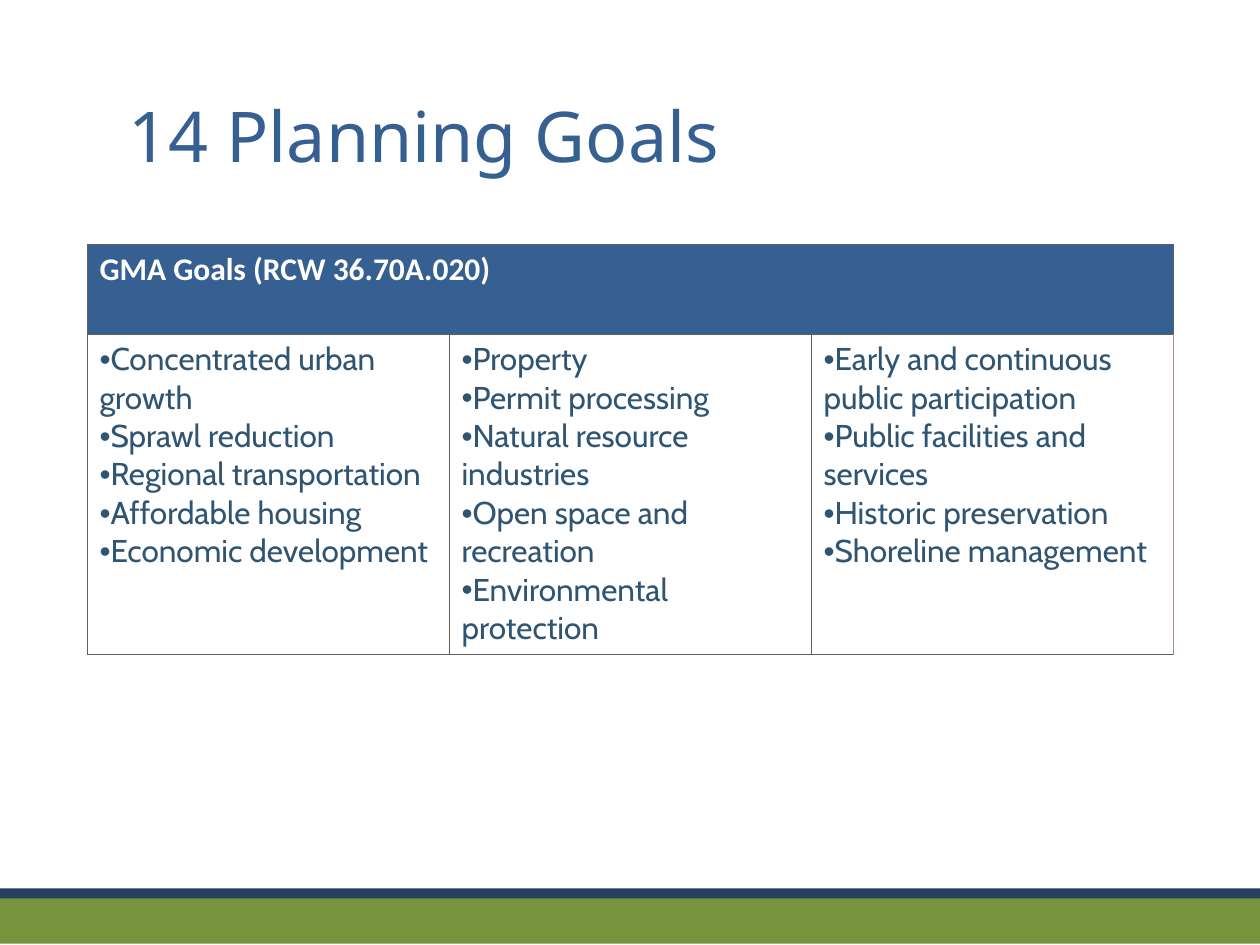
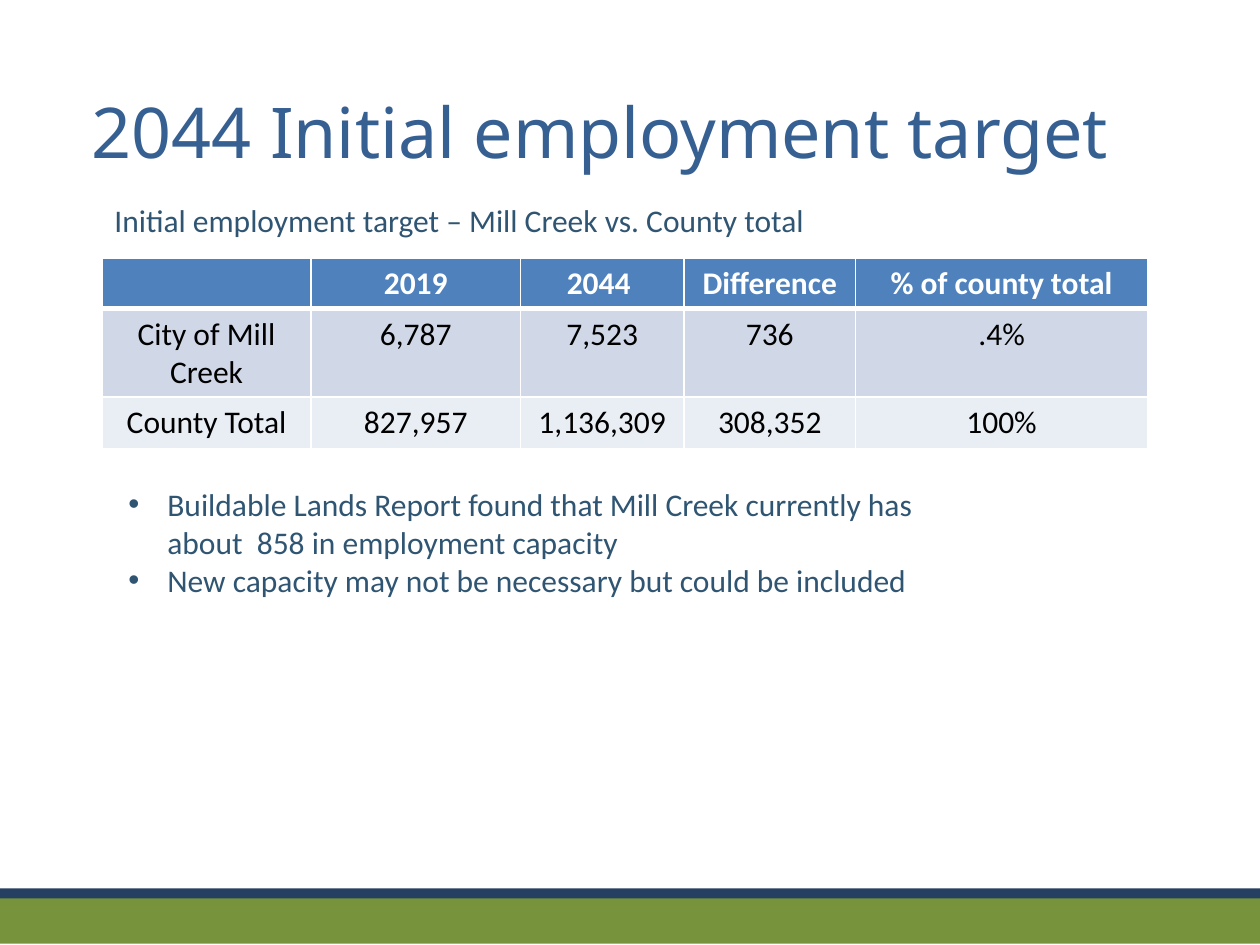
from lxml import etree
from pptx import Presentation
from pptx import util as u
from pptx.dml.color import RGBColor
from pptx.enum import shapes, text
from pptx.oxml import ns

NAVY = RGBColor(0x25, 0x40, 0x61)
GREEN = RGBColor(0x77, 0x93, 0x3C)
TITLE_BLUE = RGBColor(0x37, 0x60, 0x92)
BODY_BLUE = RGBColor(0x2F, 0x55, 0x72)
HEADER_BLUE = RGBColor(0x4F, 0x81, 0xBD)
ROW_TINTS = (RGBColor(0xD0, 0xD8, 0xE8), RGBColor(0xE9, 0xED, 0xF4))
GRID_GREY = RGBColor(0x5F, 0x5F, 0x5F)
EDGE_ROSE = RGBColor(0xB0, 0x8B, 0x8B)
WHITE = RGBColor(0xFF, 0xFF, 0xFF)
BLACK = RGBColor(0, 0, 0)

TITLE_FONT, GOALS_FONT, BODY_FONT = "Noto Sans", "Cabin", "Calibri"
BODY_SIZE = 18

GOALS = (
    ("Concentrated urban growth", "Sprawl reduction", "Regional transportation",
     "Affordable housing", "Economic development"),
    ("Property", "Permit processing", "Natural resource industries",
     "Open space and recreation", "Environmental protection"),
    ("Early and continuous public participation", "Public facilities and services",
     "Historic preservation", "Shoreline management"),
)
TARGETS = (
    ("", "2019", "2044 ", "Difference", "% of county total"),
    ("City of Mill Creek", "6,787", "7,523", "736", ".4%"),
    ("County Total", "827,957", "1,136,309", "308,352", "100%"),
)
CAPACITY_NOTES = (
    "Buildable Lands Report found that Mill Creek currently has about  858 "
    "in employment capacity",
    "New capacity may not be necessary but could be included",
)


def inches(box):
    return [u.Inches(length) for length in box]


def write_run(paragraph, words, color, font=BODY_FONT, size=BODY_SIZE, bold=False):
    run = paragraph.add_run()
    run.text = words
    run.font.name = font
    run.font.size = u.Pt(size)
    run.font.bold = bold
    run.font.color.rgb = color


def write_bullets(frame, items, color, font=BODY_FONT, indent=0):
    for i, item in enumerate(items):
        paragraph = frame.paragraphs[0] if i == 0 else frame.add_paragraph()
        props = paragraph._p.get_or_add_pPr()
        props.set("marL", str(u.Inches(indent)))
        props.set("indent", str(-u.Inches(indent)))
        etree.SubElement(props, ns.qn("a:buFont"), typeface="Arial")
        etree.SubElement(props, ns.qn("a:buChar"), char="•")
        write_run(paragraph, item, color, font)


def fill_cell(cell, color):
    cell.fill.solid()
    cell.fill.fore_color.rgb = color


def set_borders(cell, color, width, **special):
    """Draw all four borders; special maps a side (L, R, T, B) to (color, width)."""
    props = cell._tc.get_or_add_tcPr()
    for i, side in enumerate("LRTB"):
        side_color, side_width = special.get(side, (color, width))
        line = etree.Element(ns.qn(f"a:ln{side}"), w=str(u.Pt(side_width)))
        solid = etree.SubElement(line, ns.qn("a:solidFill"))
        etree.SubElement(solid, ns.qn("a:srgbClr"), val=str(side_color))
        props.insert(i, line)


def add_grid(slide, box, widths, heights):
    table = slide.shapes.add_table(len(heights), len(widths), *inches(box)).table
    for column, width in zip(table.columns, widths):
        column.width = u.Inches(width)
    for row, height in zip(table.rows, heights):
        row.height = u.Inches(height)
    return table


def add_bottom_bands(slide):
    for top, height, color in ((7.05, 0.09, NAVY), (7.13, 0.36, GREEN)):
        band = slide.shapes.add_shape(
            shapes.MSO_SHAPE.RECTANGLE, *inches((0, top, 10, height)))
        band.shadow.inherit = False
        band.fill.solid()
        band.fill.fore_color.rgb = color
        band.line.fill.background()


def add_titled_slide(deck, heading, box):
    slide = deck.slides.add_slide(deck.slide_layouts[5])
    title = slide.shapes.title
    title.left, title.top, title.width, title.height = inches(box)
    frame = title.text_frame
    frame.auto_size = text.MSO_AUTO_SIZE.NONE
    frame.vertical_anchor = text.MSO_ANCHOR.MIDDLE
    frame.paragraphs[0].alignment = text.PP_ALIGN.LEFT
    write_run(frame.paragraphs[0], heading, TITLE_BLUE, TITLE_FONT, 40)
    add_bottom_bands(slide)
    return slide


def add_goals_table(slide, box):
    count = len(GOALS)
    table = add_grid(slide, box, [box[2] / count] * count, (0.71, box[3] - 0.71))
    for col, goals in enumerate(GOALS):
        header, body = table.cell(0, col), table.cell(1, col)
        fill_cell(header, TITLE_BLUE)
        set_borders(header, GRID_GREY, 0.5)
        fill_cell(body, WHITE)
        edge = {"R": (EDGE_ROSE, 0.5)} if col == count - 1 else {}
        set_borders(body, GRID_GREY, 0.5, **edge)
        write_bullets(body.text_frame, goals, BODY_BLUE, GOALS_FONT)
    table.cell(0, 0).merge(table.cell(0, count - 1))
    write_run(table.cell(0, 0).text_frame.paragraphs[0],
              "GMA Goals (RCW 36.70A.020)", WHITE, bold=True)


def add_targets_table(slide, box):
    table = add_grid(slide, box, (1.66, 1.66, 1.3, 1.36, 2.32), (0.4, 0.69, 0.41))
    for r, row in enumerate(TARGETS):
        is_header = r == 0
        for c, value in enumerate(row):
            cell = table.cell(r, c)
            fill_cell(cell, HEADER_BLUE if is_header else ROW_TINTS[r - 1])
            rule = {"B": (WHITE, 3)} if is_header else {"T": (WHITE, 3)} if r == 1 else {}
            set_borders(cell, WHITE, 1, **rule)
            if value:
                paragraph = cell.text_frame.paragraphs[0]
                paragraph.alignment = text.PP_ALIGN.CENTER
                write_run(paragraph, value, WHITE if is_header else BLACK, bold=is_header)


def add_caption(slide, box, words):
    frame = slide.shapes.add_textbox(*inches(box)).text_frame
    frame.word_wrap = False
    write_run(frame.paragraphs[0], words, BODY_BLUE)


def add_capacity_notes(slide, box):
    frame = slide.shapes.add_textbox(*inches(box)).text_frame
    frame.word_wrap = True
    write_bullets(frame, CAPACITY_NOTES, BODY_BLUE, indent=0.31)


def build_goals_slide(deck):
    slide = add_titled_slide(deck, "14 Planning Goals", (0.92, 0.67, 7.68, 0.79))
    add_goals_table(slide, (0.69, 1.94, 8.62, 3.21))


def build_employment_slide(deck):
    slide = add_titled_slide(
        deck, "2044 Initial employment target", (0.63, 0.64, 8.65, 0.79))
    add_caption(slide, (0.81, 1.55, 5.74, 0.4),
                "Initial employment target – Mill Creek vs. County total")
    add_targets_table(slide, (0.81, 2.05, 8.3, 1.5))
    add_capacity_notes(slide, (0.92, 3.8, 6.91, 1.01))


def main():
    deck = Presentation()
    deck.slide_width, deck.slide_height = inches((10, 7.5))
    build_goals_slide(deck)
    build_employment_slide(deck)
    deck.save("out.pptx")


if __name__ == "__main__":
    main()
